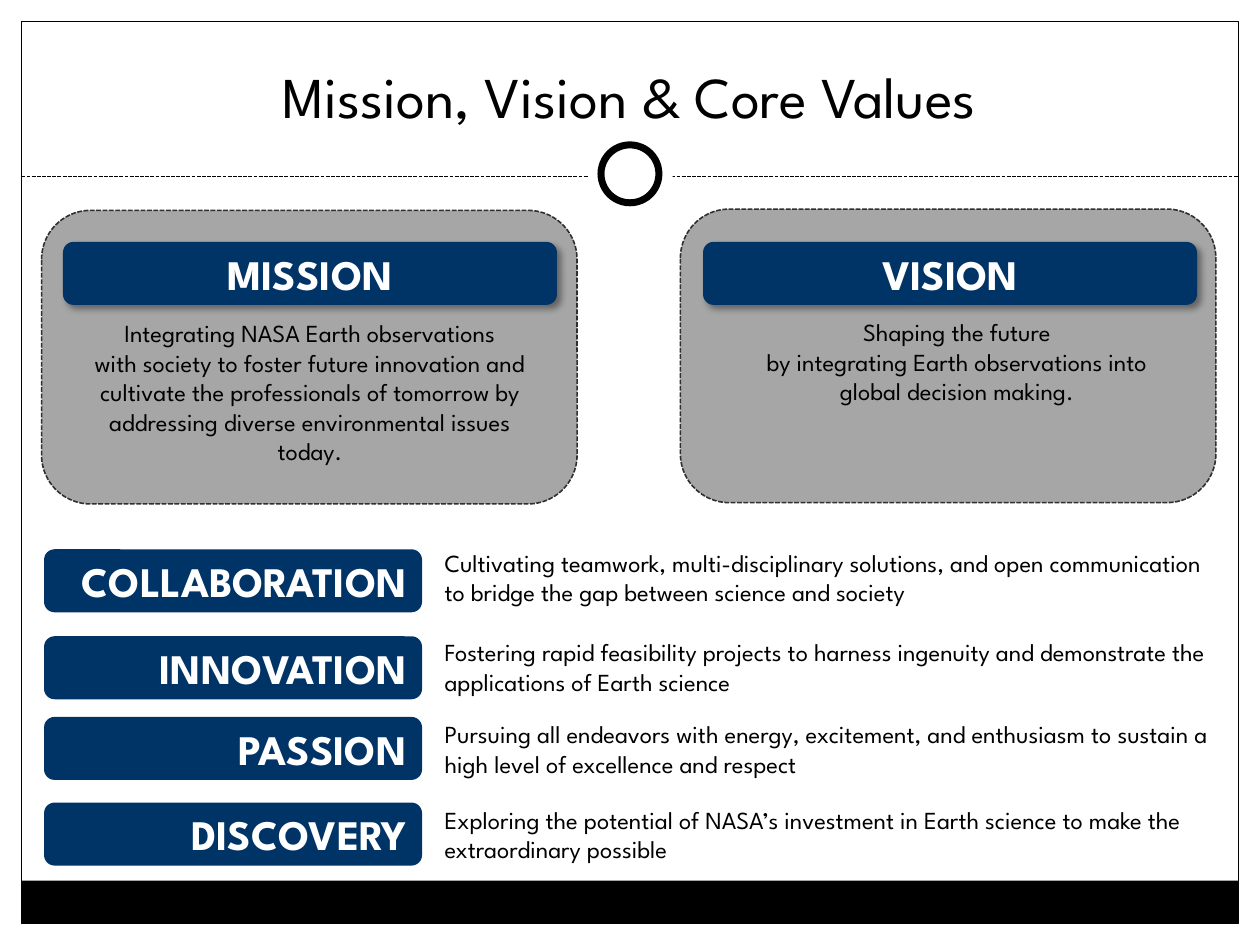
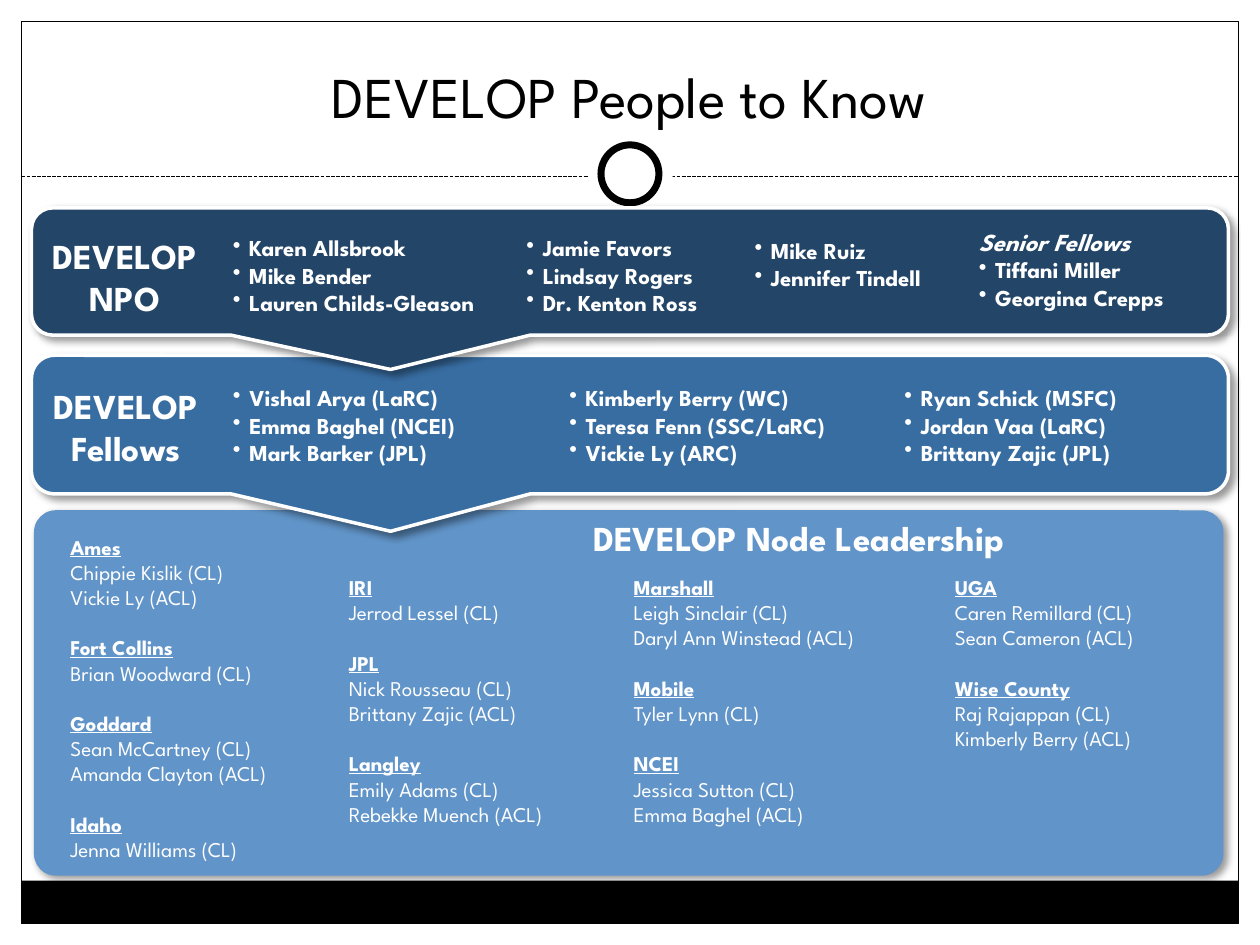
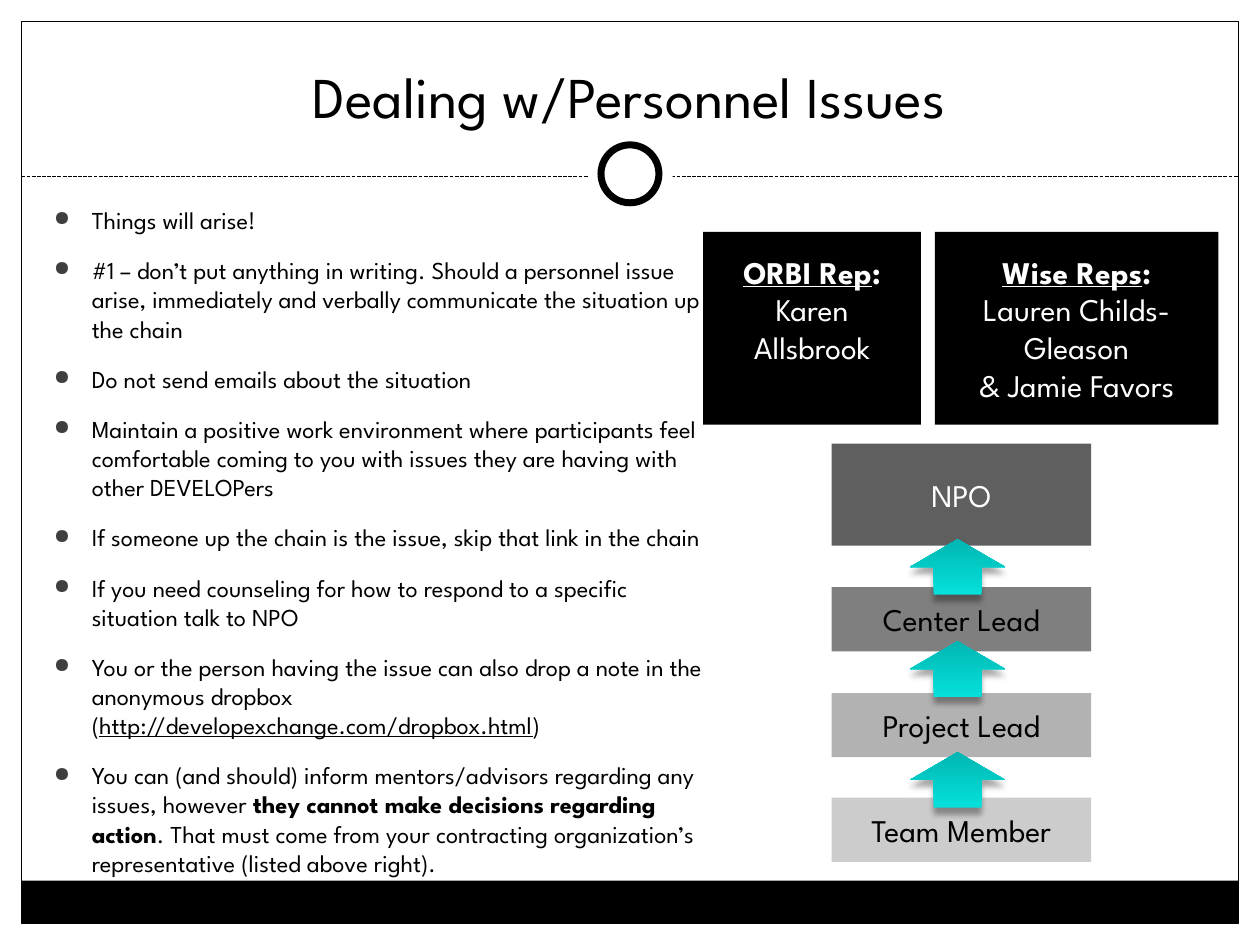
from lxml import etree
from pptx import Presentation
from pptx.dml.color import RGBColor
from pptx.enum.dml import MSO_LINE
from pptx.enum.shapes import MSO_CONNECTOR, MSO_SHAPE
from pptx.enum.text import MSO_ANCHOR, MSO_AUTO_SIZE, PP_ALIGN
from pptx.oxml.ns import qn
from pptx.util import Pt

PX = 9144  # 100 px to the inch
FONT = "League Spartan"
BLACK, WHITE, NAVY, GRAY = "000000", "FFFFFF", "003366", "A6A6A6"
RECT, ROUND, OVAL = MSO_SHAPE.RECTANGLE, MSO_SHAPE.ROUNDED_RECTANGLE, MSO_SHAPE.OVAL
CALL, ARROW = MSO_SHAPE.ROUNDED_RECTANGULAR_CALLOUT, MSO_SHAPE.DOWN_ARROW
LEFT, MID, RIGHT = PP_ALIGN.LEFT, PP_ALIGN.CENTER, PP_ALIGN.RIGHT
TOP, CENTER, BOTTOM = MSO_ANCHOR.TOP, MSO_ANCHOR.MIDDLE, MSO_ANCHOR.BOTTOM
DASH = MSO_LINE.SQUARE_DOT
SOFT = (40, 4, 3, 45)  # shadow: opacity, blur, distance, angle
LOW = (34, 3.5, 4, 90)
DOT = ("•", 13, WHITE, 100)  # bullet: sign, indent, colour, percent
DISC = ("●", 30, "3F3F3F", 85)
hue = RGBColor.from_string


def draw(slide, kind, spot, fill=None, line=None, width=0.75, shade=None):
    """Add a preset shape, or a text box when kind is None."""
    spot = [n * PX for n in spot]
    if kind is None:
        return slide.shapes.add_textbox(*spot)
    shape = slide.shapes.add_shape(kind, *spot)
    shape.shadow.inherit = False
    if fill:
        shape.fill.solid()
        shape.fill.fore_color.rgb = hue(fill)
    else:
        shape.fill.background()
    if line:
        shape.line.color.rgb = hue(line)
        shape.line.width = Pt(width)
    else:
        shape.line.fill.background()
    if shade:
        alpha, blur, dist, angle = shade
        glow = etree.SubElement(
            shape._element.spPr.find(qn("a:effectLst")), qn("a:outerShdw"),
            blurRad=str(Pt(blur)), dist=str(Pt(dist)), dir=str(angle * 60000),
            algn="tl", rotWithShape="0")
        tint = etree.SubElement(glow, qn("a:srgbClr"), val=BLACK)
        etree.SubElement(tint, qn("a:alpha"), val=str(alpha * 1000))
    return shape


def write(shape, lines, size, color, bold=False, align=LEFT, anchor=TOP, mark=None):
    """Fill a shape with paragraphs; a bar in a line starts a new run."""
    frame = shape.text_frame
    frame.word_wrap = True
    frame.auto_size = MSO_AUTO_SIZE.NONE
    frame.vertical_anchor = anchor
    for i, line in enumerate(lines):
        para = frame.add_paragraph() if i else frame.paragraphs[0]
        para.alignment = align
        if mark:
            sign, indent, tint, scale = mark
            props = para._p.get_or_add_pPr()
            props.set("marL", str(indent * PX))
            props.set("indent", str(-indent * PX))
            ink = etree.SubElement(props, qn("a:buClr"))
            etree.SubElement(ink, qn("a:srgbClr"), val=tint)
            etree.SubElement(props, qn("a:buSzPct"), val=str(scale * 1000))
            etree.SubElement(props, qn("a:buChar"), char=sign)
        for part in line.split("|"):
            run = para.add_run()
            run.text = part
            run.font.name = FONT
            run.font.size = Pt(size)
            run.font.bold = bold
            run.font.color.rgb = hue(color)
    return frame.paragraphs


deck = Presentation()
deck.slide_width, deck.slide_height = 1000 * PX, 750 * PX
base = deck.slide_layouts[5]

# Slides and titles
pages = []
for name in ("Mission, Vision & Core Values", "DEVELOP People to Know",
             "Dealing w/Personnel Issues"):
    page = deck.slides.add_slide(base)
    title = page.shapes.title
    title.left, title.top, title.width, title.height = [n * PX for n in (33, 25, 933, 83)]
    write(title, [name], 33, BLACK, align=MID, anchor=BOTTOM)
    pages.append(page)
values, people, issues = pages

# Shared frame, drawn once and moved to the layout
decor = [draw(values, RECT, spot, fill) for spot, fill in (
    ((0, 0, 1000, 152), WHITE), ((0, 0, 17, 750), WHITE),
    ((983, 0, 17, 750), WHITE), ((17, 699, 966, 34), BLACK))]
decor.append(draw(values, RECT, (17, 17, 966, 716), None, BLACK))
rule = values.shapes.add_connector(
    MSO_CONNECTOR.STRAIGHT, 17 * PX, 140 * PX, 983 * PX, 140 * PX)
rule.line.color.rgb = hue(BLACK)
rule.line.width = Pt(0.75)
rule.line.dash_style = DASH
etree.SubElement(rule._element.spPr, qn("a:effectLst"))
decor.append(rule)
decor.append(draw(values, OVAL, (467, 105, 67, 67), WHITE))
decor.append(draw(values, OVAL, (477, 115, 46, 46), WHITE, BLACK, 4))
for num, part in enumerate(decor, 20):
    part._element.xpath(".//p:cNvPr")[0].set("id", str(num))
    base.shapes._spTree.append(part._element)

# Slide 1: mission and vision cards
for card, head, spot, anchor, lines in (
        ((33, 167, 425, 233), (50, 192, 392, 50), (50, 247, 392, 128), CENTER,
         ["MISSION", "Integrating NASA Earth observations",
          "with society to foster future innovation and cultivate the professionals "
          "of tomorrow by addressing diverse environmental issues today."]),
        ((540, 166, 425, 233), (558, 192, 392, 50), (585, 247, 349, 81), TOP,
         ["VISION", "Shaping the future",
          "by integrating Earth observations into global decision making."])):
    draw(values, ROUND, card, GRAY, "2F2F2F", 0.9).line.dash_style = DASH
    write(draw(values, ROUND, head, NAVY, shade=SOFT), lines[:1], 24, WHITE,
          True, MID, CENTER)
    write(draw(values, None, spot), lines[1:], 14, BLACK, align=MID, anchor=anchor)

# Slide 1: core values
for top, low, word, text in (
        (436, 430, "COLLABORATION",
         "Cultivating teamwork, multi-disciplinary solutions, and open communication "
         "to bridge the gap between science and society"),
        (505, 501, "INNOVATION",
         "Fostering rapid feasibility projects to harness ingenuity and demonstrate "
         "the applications of Earth science"),
        (569, 566, "PASSION",
         "Pursuing all endeavors with energy, excitement, and enthusiasm to sustain "
         "a high level of excellence and respect"),
        (637, 634, "DISCOVERY",
         "Exploring the potential of NASA’s investment in Earth science to make the "
         "extraordinary possible")):
    write(draw(values, ROUND, (35, top, 300, 50), NAVY), [word], 24, WHITE,
          True, RIGHT, CENTER)
    write(draw(values, None, (343, low, 632, 57)), [text], 14, BLACK)

# Slide 2: node leadership
panel = draw(people, ROUND, (27, 405, 944, 290), "6194C8", shade=SOFT)
panel.adjustments[0] = 0.06
write(draw(people, None, (461, 405, 387, 44)), ["DEVELOP Node Leadership"], 20, WHITE, True)
for spot, names in (
        ((46, 419, 229, 273),
         ["Ames", "Chippie Kislik (CL)", "Vickie Ly (ACL)",
          "Fort Collins", "Brian Woodward (CL)",
          "Goddard", "Sean McCartney (CL)", "Amanda Clayton (ACL)",
          "Idaho", "Jenna Williams (CL)"]),
        ((267, 451, 217, 212),
         ["IRI", "Jerrod Lessel (CL)",
          "JPL", "Nick Rousseau (CL)", "Brittany Zajic (ACL)",
          "Langley", "Emily Adams (CL)", "Rebekke Muench (ACL)"]),
        ((493, 451, 248, 212),
         ["Marshall", "Leigh Sinclair (CL)", "Daryl Ann Winstead (ACL)",
          "Mobile", "Tyler Lynn (CL)",
          "NCEI", "Jessica Sutton (CL)", "Emma Baghel (ACL)"]),
        ((748, 451, 210, 151),
         ["UGA", "Caren Remillard (CL)", "Sean Cameron (ACL)",
          "Wise County", "Raj Rajappan (CL)", "Kimberly Berry (ACL)"])):
    for i, para in enumerate(write(draw(people, None, spot), names, 12, WHITE)):
        if not para.text.endswith(")"):
            para.runs[0].font.bold = True
            para.runs[0].font.underline = True
            if i:
                para.space_before = Pt(14.4)

# Slide 2: fellows and office bands, the upper one in front
for band, fill, label, words, lists in (
        ((25, 282, 950, 110), "386DA2", (30, 300, 140, 77), ["DEVELOP", "Fellows"], (
            ((175, 300, 275, 76),
             ["Vishal Arya (LaRC)", "Emma Baghel (NCEI)", "Mark Barker (JPL)"]),
            ((442, 300, 250, 76),
             ["Kimberly Berry (WC)", "Teresa Fenn (SSC/LaRC)", "Vickie Ly (ARC)"]),
            ((708, 300, 242, 76),
             ["Ryan Schick (MSFC)", "Jordan Vaa (LaRC)", "Brittany Zajic (JPL)"]))),
        ((25, 165, 950, 101), "234567", (25, 181, 148, 77), ["DEVELOP", "NPO"], (
            ((175, 181, 250, 76),
             ["Karen Allsbrook", "Mike Bender", "Lauren Childs-Gleason"]),
            ((408, 181, 170, 76),
             ["Jamie Favors", "Lindsay Rogers", "Dr. Kenton Ross"]),
            ((589, 183, 170, 54), ["Mike Ruiz", "Jennifer Tindell"]),
            ((767, 175, 200, 77),
             ["Senior Fellows", "Tiffani Miller", "Georgina Crepps"])))):
    call = draw(people, CALL, band, fill, WHITE, 2, SOFT)
    call.adjustments[0], call.adjustments[1] = -0.2, 0.77
    write(draw(people, None, label), words, 20, WHITE, True, MID)
    for spot, names in lists:
        paras = write(draw(people, None, spot), names, 13, WHITE, True, mark=DOT)
        if names[0] == "Senior Fellows":
            head = paras[0]
            head._p.remove(head._p.pPr)
            head.runs[0].font.italic = True
            head.runs[0].font.size = Pt(14)

# Slide 3: advice
advice = write(draw(issues, None, (33, 158, 542, 542)), [
    "Things will arise!",
    "#1 – don’t put anything in writing. Should a personnel issue arise, immediately "
    "and verbally communicate the situation up the chain",
    "Do not send emails about the situation",
    "Maintain a positive work environment where participants feel comfortable coming "
    "to you with issues they are having with other DEVELOPers",
    "If someone up the chain is the issue, skip that link in the chain",
    "If you need counseling for how to respond to a specific situation talk to NPO",
    "You or the person having the issue can also drop a note in the anonymous dropbox "
    "(|http://developexchange.com/dropbox.html|)",
    "You can (and should) inform mentors/advisors regarding any issues, however "
    "|they cannot make decisions regarding action|. That must come from your "
    "contracting organization’s representative (listed above right).",
], 13.9, BLACK, mark=DISC)
for para in advice[1:]:
    para.space_before = Pt(12)
advice[6].runs[1].font.underline = True
advice[7].runs[1].font.bold = True

# Slide 3: chain of contact
for top, tall, fill, color, role in (
        (352, 81, "5F5F5F", WHITE, "NPO"), (466, 51, "7F7F7F", BLACK, "Center Lead"),
        (550, 51, "B2B2B2", BLACK, "Project Lead"),
        (633, 51, "CCCCCC", BLACK, "Team Member")):
    write(draw(issues, RECT, (660, top, 206, tall), fill), [role], 18, color,
          align=MID, anchor=CENTER)
for top in (597, 509, 428):
    arrow = draw(issues, ARROW, (722, top, 76, 44), shade=LOW)
    arrow.rotation = 180
    arrow.fill.gradient()
    arrow.fill.gradient_angle = 270
    for stop, tint in zip(arrow.fill.gradient_stops, ("05E0DB", "00B6B2")):
        stop.color.rgb = hue(tint)

# Slide 3: representatives
for left, wide, foot, lines in (
        (558, 173, 35, ["ORBI Rep|: |Karen Allsbrook"]),
        (742, 225, 5, ["Wise Reps|:", "Lauren Childs-Gleason", "& Jamie Favors"])):
    box = draw(issues, RECT, (left, 184, wide, 153), BLACK)
    box.text_frame.margin_bottom = foot * PX
    head = write(box, lines, 18, WHITE, align=MID, anchor=CENTER)[0]
    head.runs[0].font.underline = True
    for run in head.runs[:2]:
        run.font.bold = True

deck.save("out.pptx")
